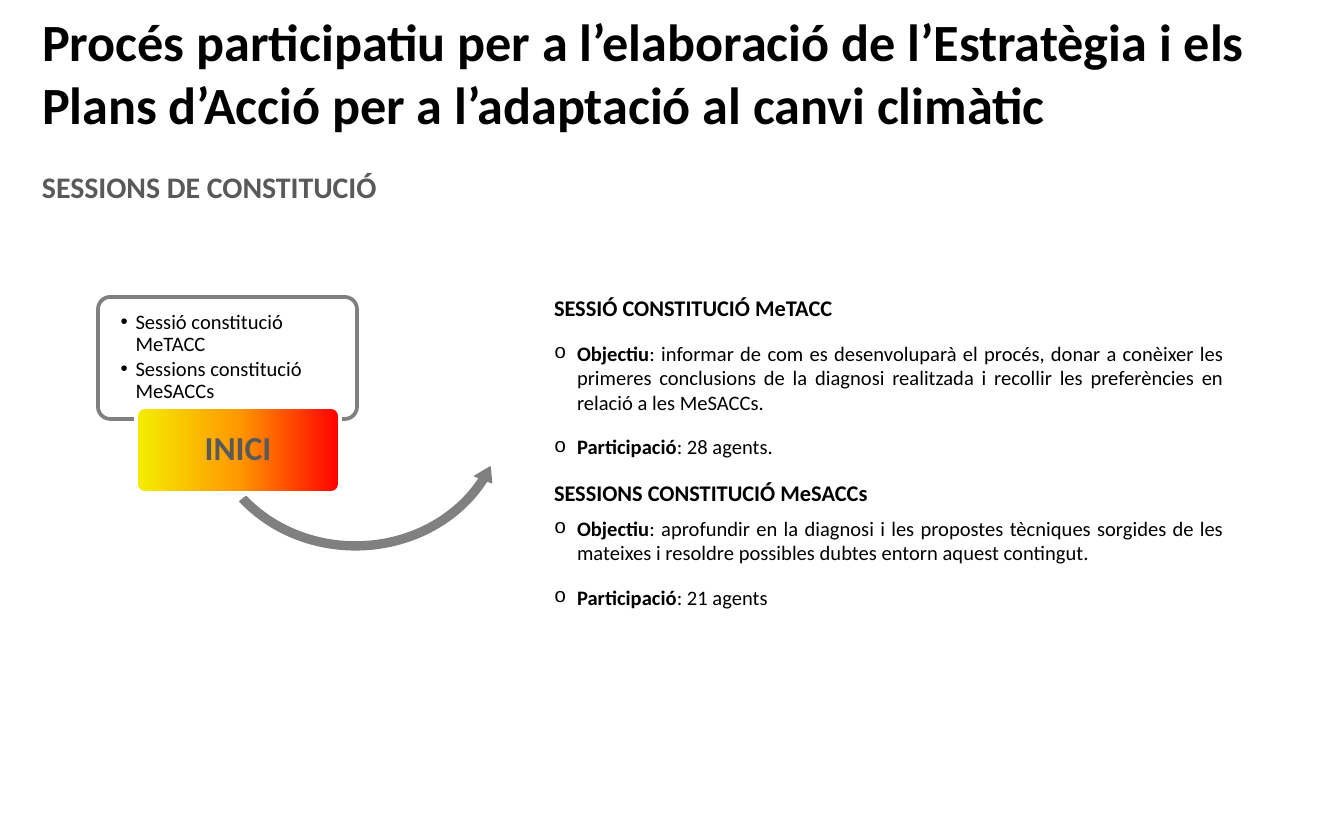
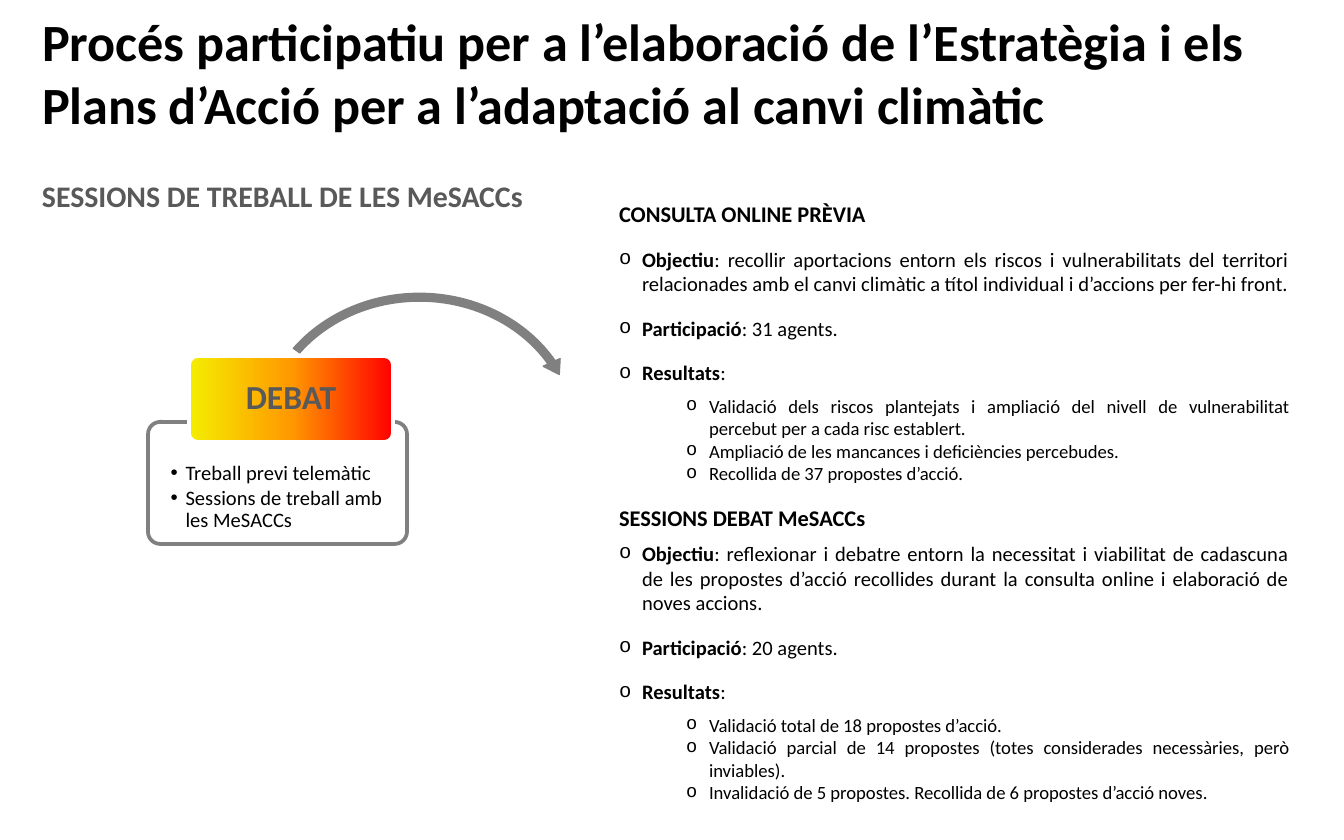
from copy import deepcopy

from lxml.etree import SubElement
from pptx import Presentation
from pptx.dml.color import RGBColor
from pptx.enum.shapes import MSO_SHAPE
from pptx.enum.text import MSO_ANCHOR, MSO_AUTO_SIZE, PP_ALIGN
from pptx.oxml.ns import qn
from pptx.util import Emu, Pt

PX = 914400 / 134.4
FONT = "Calibri"
BLACK = RGBColor(0x00, 0x00, 0x00)
WHITE = RGBColor(0xFF, 0xFF, 0xFF)
GREY = RGBColor(0x80, 0x80, 0x80)
DARK_GREY = RGBColor(0x59, 0x59, 0x59)
BADGE_STOPS = [
    (0, RGBColor(0xF4, 0xEE, 0x00)),
    (0.5, RGBColor(0xFF, 0x99, 0x00)),
    (1, RGBColor(0xFF, 0x00, 0x00)),
]

TITLE = ("Procés participatiu per a l’elaboració de l’Estratègia i els "
         "Plans d’Acció per a l’adaptació al canvi climàtic")
TITLE_BOX = (30, 3, 1314, 138)
SUBTITLE_SIZE = (948, 48)
PANEL_SIZE = (259, 122)
BADGE_SIZE = (204, 86)
DETAILS_WIDTH = 694
GAP = 5.3

SLIDES = [
    {
        "subtitle": "SESSIONS DE CONSTITUCIÓ",
        "subtitle_at": (30, 163),
        "panel": ["Sessió constitució MeTACC", "Sessions constitució MeSACCs"],
        "panel_at": (98, 297),
        "panel_top_inset": 11,
        "badge": "INICI",
        "badge_at": (136, 407),
        "arrow": MSO_SHAPE.LEFT_CIRCULAR_ARROW,
        "arrow_box": (199, 271, 313, 284),
        "arrow_adjustments": (0.028, 3.386, 16.478, 85.582, 0.032),
        "details_at": (542, 288),
        "details_height": 333,
        "details": [
            ("heading", "SESSIÓ CONSTITUCIÓ MeTACC", ""),
            ("item", "Objectiu", ": informar de com es desenvoluparà el procés, donar a "
             "conèixer les primeres conclusions de la diagnosi realitzada i recollir les "
             "preferències en relació a les MeSACCs."),
            ("item", "Participació", ": 28 agents."),
            ("heading", "SESSIONS CONSTITUCIÓ MeSACCs", ""),
            ("item", "Objectiu", ": aprofundir en la diagnosi i les propostes tècniques "
             "sorgides de les mateixes i resoldre possibles dubtes entorn aquest contingut."),
            ("item", "Participació", ": 21 agents"),
        ],
    },
    {
        "subtitle": "SESSIONS DE TREBALL DE LES MeSACCs",
        "subtitle_at": (30, 172),
        "panel": ["Treball previ telemàtic", "Sessions de treball amb les MeSACCs"],
        "panel_at": (148, 422),
        "panel_top_inset": 37,
        "badge": "DEBAT",
        "badge_at": (189, 356),
        "arrow": MSO_SHAPE.CIRCULAR_ARROW,
        "arrow_box": (254, 288, 331, 298),
        "arrow_adjustments": (0.026, 3.196, 198.358, 129.064, 0.031),
        "details_at": (607, 194),
        "details_height": 636,
        "details": [
            ("heading", "CONSULTA ONLINE PRÈVIA", ""),
            ("item", "Objectiu", ": recollir aportacions entorn els riscos i vulnerabilitats "
             "del territori relacionades amb el canvi climàtic a títol individual i "
             "d’accions per fer-hi front."),
            ("item", "Participació", ": 31 agents."),
            ("item", "Resultats", ":"),
            ("result", "", "Validació dels riscos plantejats i ampliació del nivell de "
             "vulnerabilitat percebut per a cada risc establert."),
            ("result", "", "Ampliació de les mancances i deficiències percebudes."),
            ("result", "", "Recollida de 37 propostes d’acció."),
            ("heading", "SESSIONS DEBAT MeSACCs", ""),
            ("item", "Objectiu", ": reflexionar i debatre entorn la necessitat i viabilitat "
             "de cadascuna de les propostes d’acció recollides durant la consulta online i "
             "elaboració de noves accions."),
            ("item", "Participació", ": 20 agents."),
            ("item", "Resultats", ":"),
            ("result", "", "Validació total de 18 propostes d’acció."),
            ("result", "", "Validació parcial de 14 propostes (totes considerades "
             "necessàries, però inviables)."),
            ("result", "", "Invalidació de 5 propostes. Recollida de 6 propostes d’acció "
             "noves."),
        ],
    },
]

DETAIL_STYLES = {
    "heading": {"size": 12, "margin": 0, "level": 0, "before": GAP, "after": 0},
    "item": {"size": 11, "margin": 23, "level": 0, "before": GAP, "after": GAP},
    "result": {"size": 10, "margin": 90, "level": 1, "before": 0, "after": 0},
}


def px(*values):
    return [Emu(round(v * PX)) for v in values]


def place(sp, box):
    sp.left, sp.top, sp.width, sp.height = px(*box)


def set_frame(tf, insets, anchor, auto_size=MSO_AUTO_SIZE.NONE):
    tf.word_wrap = True
    tf.auto_size = auto_size
    tf.vertical_anchor = anchor
    tf.margin_left, tf.margin_top, tf.margin_right, tf.margin_bottom = px(*insets)


def add_run(p, text, size, color=BLACK, bold=False):
    r = p.add_run()
    r.text = text
    r.font.name = FONT
    r.font.size = Pt(size)
    r.font.bold = bold
    r.font.color.rgb = color


def set_bullet(p, char, margin, hanging, font="Arial"):
    pPr = p._p.get_or_add_pPr()
    left, indent = px(margin, -hanging)
    pPr.set("marL", str(left))
    pPr.set("indent", str(indent))
    if char:
        SubElement(pPr, qn("a:buFont"), typeface=font)
        SubElement(pPr, qn("a:buChar"), char=char)
    else:
        SubElement(pPr, qn("a:buNone"))


def paragraphs(tf, items):
    for i, item in enumerate(items):
        yield (tf.add_paragraph() if i else tf.paragraphs[0]), item


def add_shape(s, preset, box, fill, line, line_width):
    sp = s.shapes.add_shape(preset, *px(*box))
    sp.shadow.inherit = False
    sp.fill.solid()
    sp.fill.fore_color.rgb = fill
    sp.line.color.rgb = line
    sp.line.width = Pt(line_width)
    return sp


def add_title(s):
    sp = s.shapes.title
    place(sp, TITLE_BOX)
    set_frame(sp.text_frame, (12, 6, 12, 6), MSO_ANCHOR.MIDDLE)
    p = sp.text_frame.paragraphs[0]
    p.alignment = PP_ALIGN.LEFT
    add_run(p, TITLE, 28, bold=True)


def add_subtitle(s, text, at):
    sp = s.shapes.add_textbox(*px(*at, *SUBTITLE_SIZE))
    set_frame(sp.text_frame, (12, 6, 12, 6), MSO_ANCHOR.MIDDLE,
              MSO_AUTO_SIZE.SHAPE_TO_FIT_TEXT)
    add_run(sp.text_frame.paragraphs[0], text, 16, DARK_GREY, True)


def add_panel(s, items, at, top_inset):
    sp = add_shape(s, MSO_SHAPE.ROUNDED_RECTANGLE, (*at, *PANEL_SIZE), WHITE, GREY, 2)
    sp.adjustments[0] = 0.1
    color = sp._element.spPr.find(qn("a:solidFill"))[0]
    SubElement(color, qn("a:alpha"), val="90000")
    set_frame(sp.text_frame, (19, top_inset, 19, 0), MSO_ANCHOR.TOP)
    for p, text in paragraphs(sp.text_frame, items):
        p.level = 1
        p.alignment = PP_ALIGN.LEFT
        set_bullet(p, "•", 15, 15)
        p.line_spacing = 0.9
        p.space_after = Pt(1.65)
        add_run(p, text, 11)


def add_arrow(s, preset, box, adjustments):
    sp = add_shape(s, preset, box, GREY, GREY, 0.75)
    for i, value in enumerate(adjustments):
        sp.adjustments[i] = value


def add_badge(s, text, at):
    sp = add_shape(s, MSO_SHAPE.ROUNDED_RECTANGLE, (*at, *BADGE_SIZE), WHITE, WHITE, 2)
    sp.adjustments[0] = 0.1
    sp.fill.gradient()
    sp.fill.gradient_angle = 0
    stops = sp._element.spPr.find(qn("a:gradFill")).find(qn("a:gsLst"))
    stops.append(deepcopy(stops[0]))
    for stop, (position, color) in zip(sp.fill.gradient_stops, BADGE_STOPS):
        stop.position = position
        stop.color.rgb = color
    set_frame(sp.text_frame, (5, 4, 5, 4), MSO_ANCHOR.MIDDLE)
    p = sp.text_frame.paragraphs[0]
    p.alignment = PP_ALIGN.CENTER
    p.line_spacing = 0.9
    add_run(p, text, 18, DARK_GREY, True)


def add_details(s, items, at, height):
    sp = s.placeholders[1]
    place(sp, (*at, DETAILS_WIDTH, height))
    set_frame(sp.text_frame, (12, 6, 12, 6), MSO_ANCHOR.TOP,
              MSO_AUTO_SIZE.SHAPE_TO_FIT_TEXT)
    previous = None
    for p, (kind, label, text) in paragraphs(sp.text_frame, items):
        style = DETAIL_STYLES[kind]
        before, after = style["before"], style["after"]
        if previous is None:
            before, after = 0, GAP
        elif kind == "heading" and previous == "result":
            before = 2 * GAP
        p.level = style["level"]
        p.alignment = PP_ALIGN.JUSTIFY
        set_bullet(p, "" if kind == "heading" else "o", style["margin"],
                   min(style["margin"], 23), "Courier New")
        p.space_before = Pt(before)
        p.space_after = Pt(after)
        if label:
            add_run(p, label, style["size"], bold=True)
        if text:
            add_run(p, text, style["size"])
        previous = kind


def main():
    prs = Presentation()
    prs.slide_width, prs.slide_height = px(1344, 840)
    for content in SLIDES:
        s = prs.slides.add_slide(prs.slide_layouts[1])
        add_title(s)
        add_subtitle(s, content["subtitle"], content["subtitle_at"])
        add_panel(s, content["panel"], content["panel_at"], content["panel_top_inset"])
        add_arrow(s, content["arrow"], content["arrow_box"], content["arrow_adjustments"])
        add_badge(s, content["badge"], content["badge_at"])
        add_details(s, content["details"], content["details_at"], content["details_height"])
    prs.save("out.pptx")


if __name__ == "__main__":
    main()
